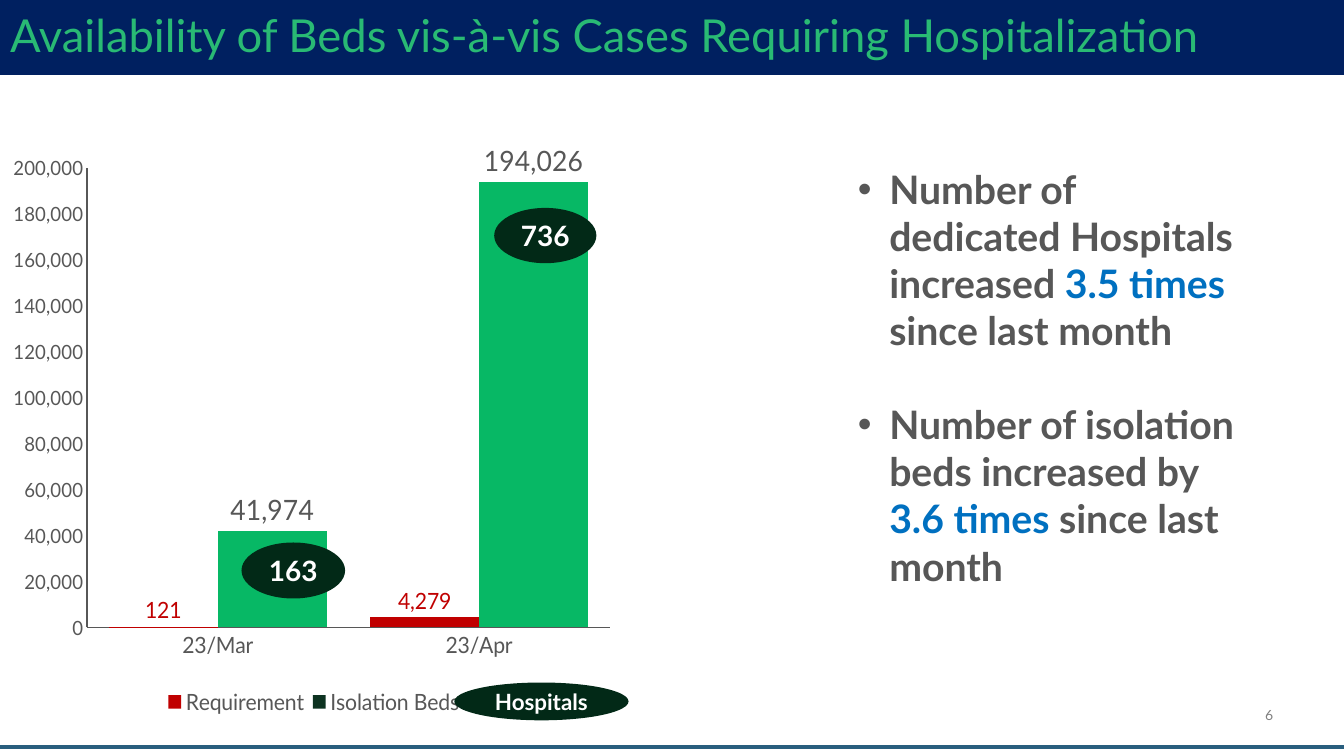
from lxml.etree import SubElement
from pptx import Presentation
from pptx.chart.data import CategoryChartData
from pptx.dml.color import RGBColor
from pptx.enum.chart import XL_CHART_TYPE, XL_LABEL_POSITION, XL_LEGEND_POSITION, XL_TICK_MARK
from pptx.enum.shapes import MSO_CONNECTOR, MSO_SHAPE
from pptx.enum.text import MSO_ANCHOR, MSO_AUTO_SIZE, PP_ALIGN
from pptx.oxml.ns import qn
from pptx.util import Pt


def paint(color_format, hex_color):
    color_format.rgb = RGBColor.from_string(hex_color)


def style(font, size, hex_color, bold=False):
    font.name = "Lato"
    font.size = Pt(size)
    font.bold = bold
    paint(font.color, hex_color)


GREY = "575757"
RED = "C00000"
GREEN = "07B865"
BLUE = "0070C0"
DARK_GREEN = "022917"

presentation = Presentation()
presentation.slide_width = Pt(960)
presentation.slide_height = Pt(540)
slide = presentation.slides.add_slide(presentation.slide_layouts[1])
title, findings = slide.placeholders

footer_rule = slide.shapes.add_connector(MSO_CONNECTOR.STRAIGHT, Pt(0), Pt(533.5), Pt(960), Pt(533.5))
paint(footer_rule.line.color, "295E7E")
footer_rule.line.width = Pt(3)
SubElement(footer_rule._element.spPr, qn("a:effectLst"))

page_number = slide.shapes.add_textbox(Pt(879), Pt(504), Pt(30.5), Pt(12.5))
page_frame = page_number.text_frame
page_frame.margin_left = page_frame.margin_right = page_frame.margin_top = page_frame.margin_bottom = Pt(0)
page_frame.word_wrap = True
page_frame.vertical_anchor = MSO_ANCHOR.BOTTOM
page_frame.text = "6"
page_frame.paragraphs[0].alignment = PP_ALIGN.RIGHT
style(page_frame.paragraphs[0].font, 10, "808080")

title.left, title.top, title.width, title.height = Pt(0), Pt(0), Pt(960), Pt(53.5)
title.fill.solid()
paint(title.fill.fore_color, "002060")
title.text_frame.text = "Availability of Beds vis-à-vis Cases Requiring Hospitalization"
title.text_frame.vertical_anchor = MSO_ANCHOR.MIDDLE
title.text_frame.auto_size = MSO_AUTO_SIZE.NONE
heading = title.text_frame.paragraphs[0]
heading.alignment = PP_ALIGN.LEFT
heading.line_spacing = 0.9
style(heading.font, 32.4, "29BA74")

bed_data = CategoryChartData(number_format="#,##0")
bed_data.categories = ["23/Mar", "23/Apr"]
bed_data.add_series("Requirement", [121, 4279])
bed_data.add_series("Isolation Beds", [41974, 194026])
chart = slide.shapes.add_chart(
    XL_CHART_TYPE.COLUMN_CLUSTERED, Pt(9.5), Pt(60.5), Pt(431), Pt(454.5), bed_data
).chart
chart.has_title = False
style(chart.font, 16, GREY)
chart.has_legend = True
chart.legend.position = XL_LEGEND_POSITION.BOTTOM
chart.legend.include_in_layout = False
style(chart.legend.font, 16, GREY)

for axis, label_size, line_width in [(chart.category_axis, 16, 0.75), (chart.value_axis, 14, 1.5)]:
    axis.has_major_gridlines = False
    axis.major_tick_mark = axis.minor_tick_mark = XL_TICK_MARK.NONE
    style(axis.tick_labels.font, label_size, GREY)
    paint(axis.format.line.color, GREY)
    axis.format.line.width = Pt(line_width)
chart.value_axis.minimum_scale = 0
chart.value_axis.maximum_scale = 200000
chart.value_axis.major_unit = 20000
chart.value_axis.tick_labels.number_format = "#,##0"
chart.value_axis.tick_labels.number_format_is_linked = False

plot = chart.plots[0]
plot.gap_width = 40
plot.overlap = 0
plot.vary_by_categories = False
series_looks = [(RED, RED, RED, 16), ("0D3321", GREEN, GREY, 20)]
for series, (legend_color, bar_color, label_color, label_size) in zip(plot.series, series_looks):
    series.format.fill.solid()
    paint(series.format.fill.fore_color, legend_color)
    if bar_color != legend_color:
        for index in range(2):
            bar_fill = series.points[index].format.fill
            bar_fill.solid()
            paint(bar_fill.fore_color, bar_color)
    labels = series.data_labels
    labels.show_value = True
    labels.number_format = "#,##0"
    labels.number_format_is_linked = False
    labels.position = XL_LABEL_POSITION.OUTSIDE_END
    style(labels.font, label_size, label_color)

edges = [("xMode", "edge"), ("yMode", "edge")]
for area, position, settings in [
    (chart._chartSpace.chart.plotArea, 0,
     [("layoutTarget", "inner"), *edges, ("x", "0.073"), ("y", "0.131"), ("w", "0.915"), ("h", "0.722")]),
    (chart.legend._element, 1,
     [*edges, ("x", "0.2"), ("y", "0.94"), ("w", "0.54"), ("h", "0.06")]),
]:
    for old_layout in area.findall(qn("c:layout")):
        area.remove(old_layout)
    layout = SubElement(area, qn("c:layout"))
    area.insert(position, layout)
    manual_layout = SubElement(layout, qn("c:manualLayout"))
    for tag, value in settings:
        SubElement(manual_layout, qn(f"c:{tag}")).set("val", value)

for caption, left, top, width, height, size in [
    ("163", 172.5, 387.5, 74, 40, 20),
    ("736", 353, 148.5, 73, 39.5, 20),
    ("Hospitals", 324.5, 487.5, 124.5, 27, 16),
]:
    hospitals = slide.shapes.add_shape(MSO_SHAPE.OVAL, Pt(left), Pt(top), Pt(width), Pt(height))
    hospitals.shadow.inherit = False
    hospitals.fill.solid()
    paint(hospitals.fill.fore_color, DARK_GREEN)
    hospitals.line.fill.background()
    hospitals.text_frame.text = caption
    hospitals.text_frame.vertical_anchor = MSO_ANCHOR.MIDDLE
    hospitals.text_frame.paragraphs[0].alignment = PP_ALIGN.CENTER
    style(hospitals.text_frame.paragraphs[0].font, size, "FFFFFF", True)

findings.left, findings.top, findings.width, findings.height = Pt(605.5), Pt(114.5), Pt(294.5), Pt(312.5)
findings_frame = findings.text_frame
findings_frame.auto_size = MSO_AUTO_SIZE.NONE
findings_frame.vertical_anchor = MSO_ANCHOR.TOP
for finding, growth, space_before in [
    ("Number of dedicated Hospitals increased ", "3.5 times ", 0),
    ("Number of isolation beds increased by ", "3.6 times ", 33.6),
]:
    bullet = findings_frame.paragraphs[0] if space_before == 0 else findings_frame.add_paragraph()
    properties = bullet._p.get_or_add_pPr()
    properties.set("marL", str(Pt(22.5)))
    properties.set("indent", str(-Pt(22.5)))
    bullet.space_before = Pt(space_before)
    style(bullet.font, 28, GREY, True)
    for words, color in [(finding, GREY), (growth, BLUE), ("since last month", GREY)]:
        run = bullet.add_run()
        run.text = words
        style(run.font, 28, color, True)

presentation.save("out.pptx")
